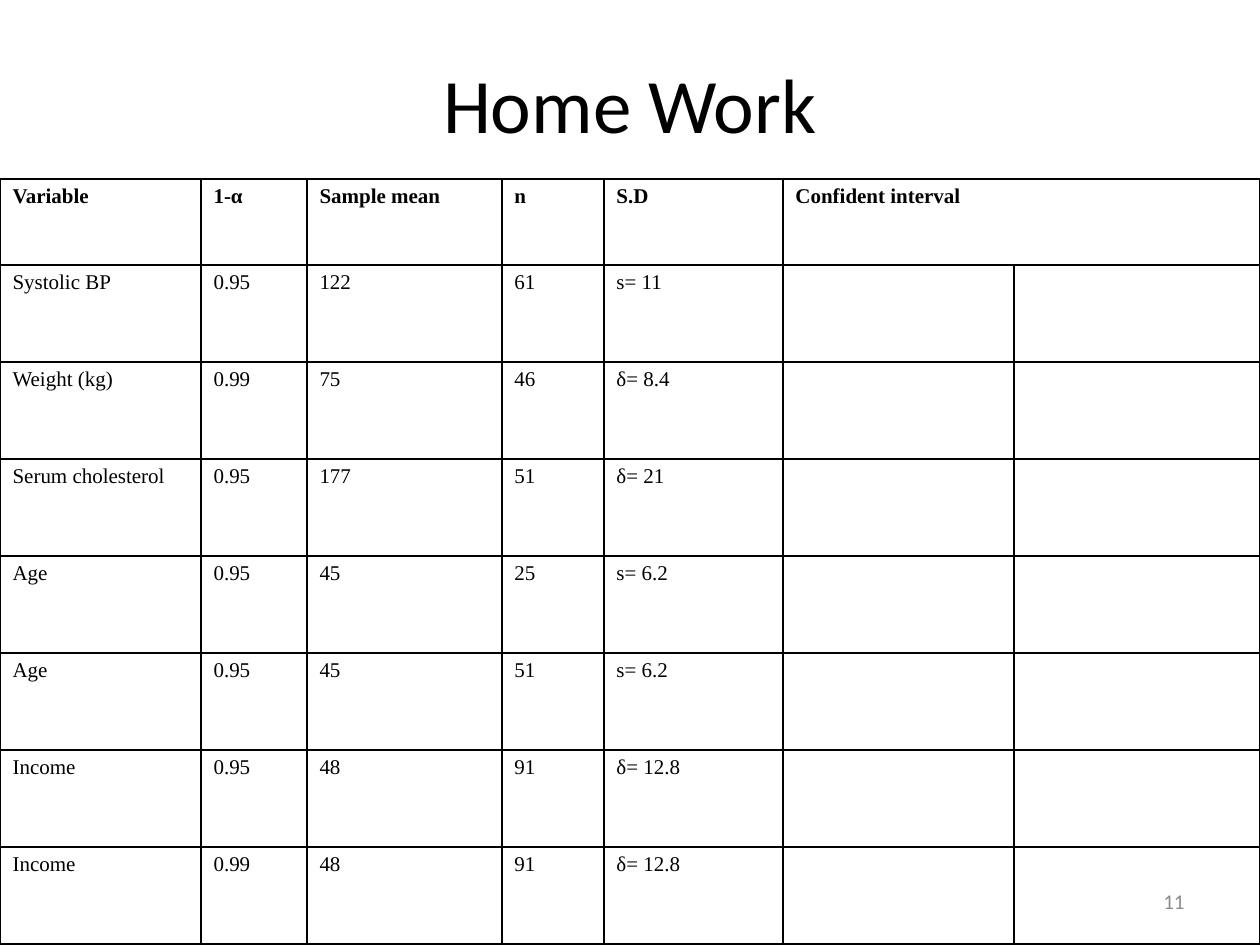
from lxml import etree
from pptx import Presentation
from pptx import util as u
from pptx.dml.color import RGBColor
from pptx.enum import text
from pptx.oxml.ns import qn

PX_PER_INCH = 126
COLORS = {"ink": "000000", "page_number": "8C8C8C"}
HANGING_INDENT = 48

COLUMN_WIDTHS = [201, 106, 195, 102, 179, 231, 246]
HEADER_HEIGHT, ROW_HEIGHT = 86, 97
ROWS = [
    ["Variable", "1-α", "Sample mean", "n", "S.D", "Confident interval"],
    ["Systolic BP", "0.95", "122", "61", "s= 11"],
    ["Weight (kg)", "0.99", "75", "46", "δ= 8.4"],
    ["Serum cholesterol", "0.95", "177", "51", "δ= 21"],
    ["Age", "0.95", "45", "25", "s= 6.2"],
    ["Age", "0.95", "45", "51", "s= 6.2"],
    ["Income", "0.95", "48", "91", "δ= 12.8"],
    ["Income", "0.99", "48", "91", "δ= 12.8"],
]


def px(length):
    return u.Emu(round(length * 914400 / PX_PER_INCH))


def style_paragraph(paragraph, font_name, size, color, bold=False, align=None):
    font = paragraph.font
    font.name, font.size, font.bold = font_name, u.Pt(size), bold
    font.color.rgb = RGBColor.from_string(COLORS[color])
    paragraph.alignment = align


def add_title(slide, words):
    title = slide.shapes.title
    title.left, title.top, title.width, title.height = px(63), px(38), px(1134), px(130)
    title.text_frame.text = words
    title.text_frame.vertical_anchor = text.MSO_ANCHOR.MIDDLE
    style_paragraph(title.text_frame.paragraphs[0], "Calibri", 44, "ink",
                    align=text.PP_ALIGN.CENTER)


def add_borders(cell):
    properties = cell._tc.get_or_add_tcPr()
    for side in ("lnL", "lnR", "lnT", "lnB"):
        line = etree.SubElement(properties, qn(f"a:{side}"), w=str(u.Pt(1)))
        fill = etree.SubElement(line, qn("a:solidFill"))
        etree.SubElement(fill, qn("a:srgbClr"), val=COLORS["ink"])


def fill_cell(cell, words, bold):
    add_borders(cell)
    cell.fill.background()
    cell.text = words
    paragraph = cell.text_frame.paragraphs[0]
    style_paragraph(paragraph, "Times New Roman", 12, "ink", bold)
    # Hanging indent
    properties = paragraph._p.get_or_add_pPr()
    properties.set("marL", str(px(HANGING_INDENT)))
    properties.set("indent", str(-px(HANGING_INDENT)))


def add_homework_table(slide):
    heights = [HEADER_HEIGHT] + [ROW_HEIGHT] * (len(ROWS) - 1)
    frame = slide.shapes.add_table(len(ROWS), len(COLUMN_WIDTHS), px(0), px(179),
                                   px(sum(COLUMN_WIDTHS)), px(sum(heights)))
    table = frame.table
    table.first_row = table.horz_banding = False
    for column, width in zip(table.columns, COLUMN_WIDTHS):
        column.width = px(width)
    for row_index, (values, height) in enumerate(zip(ROWS, heights)):
        table.rows[row_index].height = px(height)
        for column_index in range(len(COLUMN_WIDTHS)):
            words = values[column_index] if column_index < len(values) else ""
            fill_cell(table.cell(row_index, column_index), words, row_index == 0)
    # The last heading covers both interval limits
    table.cell(0, 5).merge(table.cell(0, 6))


def add_page_number(slide, number):
    box = slide.shapes.add_textbox(px(903), px(876), px(294), px(50))
    frame = box.text_frame
    frame.word_wrap = True
    frame.vertical_anchor = text.MSO_ANCHOR.MIDDLE
    frame.text = number
    style_paragraph(frame.paragraphs[0], "Calibri", 12, "page_number",
                    align=text.PP_ALIGN.RIGHT)


def main():
    presentation = Presentation()
    presentation.slide_width, presentation.slide_height = px(1260), px(945)
    # Title Only layout
    slide = presentation.slides.add_slide(presentation.slide_layouts[5])
    add_title(slide, "Home Work")
    add_homework_table(slide)
    add_page_number(slide, "11")
    presentation.save("out.pptx")


if __name__ == "__main__":
    main()
